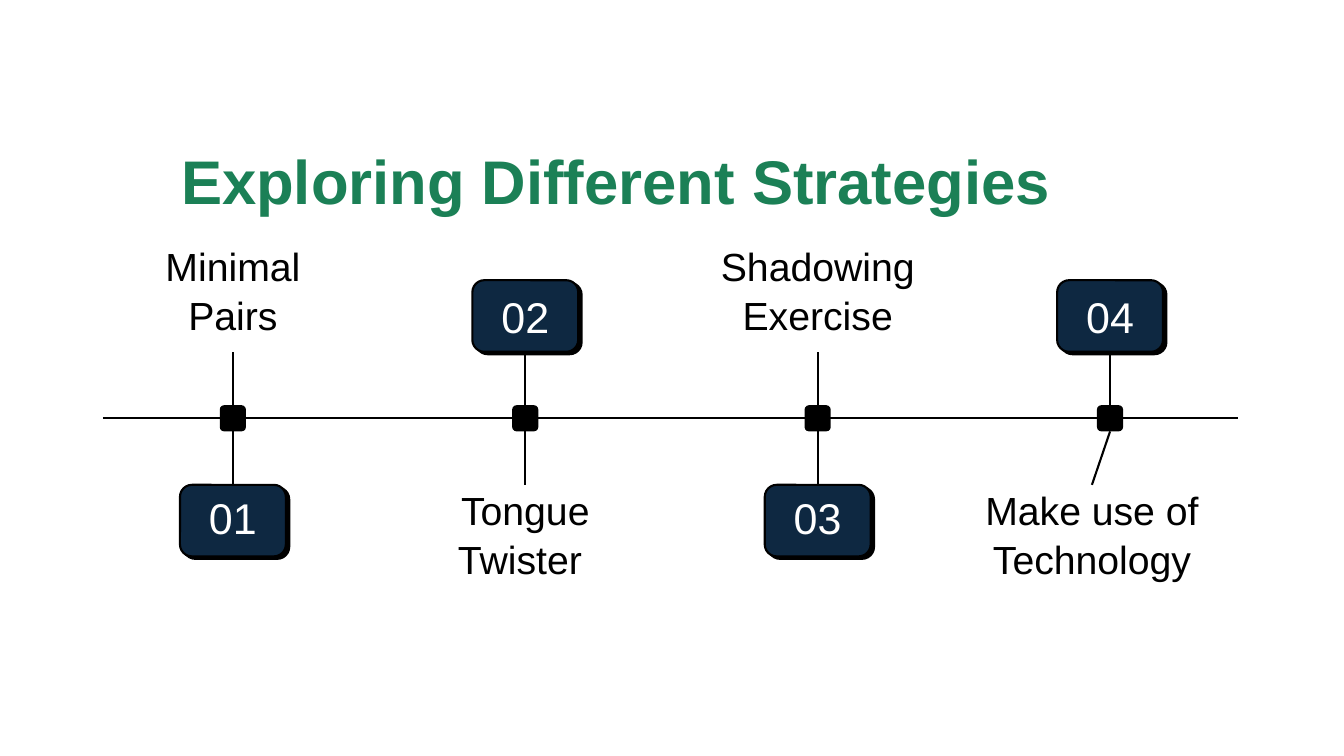
from lxml.etree import SubElement
from pptx import Presentation
from pptx.dml.color import RGBColor
from pptx.enum.shapes import MSO_CONNECTOR, MSO_SHAPE
from pptx.enum.text import MSO_ANCHOR, MSO_AUTO_SIZE, PP_ALIGN
from pptx.oxml.ns import qn
from pptx.util import Inches, Pt

SLIDE_WIDTH, SLIDE_HEIGHT = 13.33, 7.5
FONT = "Arial"
GREEN, NAVY, BLACK, WHITE = "1B8056", "0E2841", "000000", "FFFFFF"
INSET = 0.13

# Timeline grid, in inches
FIRST_COLUMN, COLUMN = 1.29, 2.9
CARD_WIDTH, CARD_HEIGHT = 1.05, 0.71
NUMBER_WIDTH, NUMBER_HEIGHT = 1.07, 0.65
MARKER = 0.26
STEM = 0.66  # from the axis to a card or a label

# Number, label, label width, label height, label shift, label above the axis
STEPS = [
    ("01", "Minimal Pairs", 2.54, 0.67, 0, True),
    ("02", "Tongue Twister ", 2.54, 1.1, 0, False),
    ("03", "Shadowing Exercise", 3.22, 0.67, 0, True),
    ("04", "Make use of Technology", 2.91, 1.1, -0.18, False),
]


def color(hex_string):
    return RGBColor.from_string(hex_string)


def inches(*lengths):
    return [Inches(length) for length in lengths]


def write_text(shape, text, size, fill, bold=False, align=PP_ALIGN.CENTER,
               anchor=MSO_ANCHOR.MIDDLE, line_spacing=1.0):
    frame = shape.text_frame
    frame.word_wrap = True
    frame.auto_size = MSO_AUTO_SIZE.NONE
    frame.vertical_anchor = anchor
    frame.margin_left = frame.margin_right = Inches(INSET)
    frame.margin_top = frame.margin_bottom = Inches(INSET)
    frame.text = text
    paragraph = frame.paragraphs[0]
    paragraph.alignment = align
    paragraph.line_spacing = line_spacing
    font = paragraph.runs[0].font
    font.name, font.size, font.bold = FONT, Pt(size), bold
    font.color.rgb = color(fill)


def add_text(slide, box, text, size, fill, **text_format):
    write_text(slide.shapes.add_textbox(*inches(*box)), text, size, fill,
               **text_format)


def add_line(slide, *ends):
    line = slide.shapes.add_connector(MSO_CONNECTOR.STRAIGHT, *inches(*ends))
    line.line.color.rgb = color(BLACK)
    line.line.width = Pt(1.5)
    SubElement(line._element.spPr, qn("a:effectLst"))


def add_rounded(slide, box, fill):
    shape = slide.shapes.add_shape(MSO_SHAPE.ROUNDED_RECTANGLE, *inches(*box))
    shape.shadow.inherit = False
    shape.fill.solid()
    shape.fill.fore_color.rgb = color(fill)
    shape.line.fill.background()
    return shape


def add_hard_shadow(shape):
    effects = shape._element.spPr.find(qn("a:effectLst"))
    shadow = SubElement(effects, qn("a:outerShdw"), blurRad="0",
                        dist=str(Pt(3)), dir=str(36 * 60000),
                        algn="tl", rotWithShape="0")
    SubElement(shadow, qn("a:srgbClr"), val=BLACK)


def add_card(slide, center, top, number, number_top):
    box = (center - CARD_WIDTH / 2, top, CARD_WIDTH, CARD_HEIGHT)
    card = add_rounded(slide, box, NAVY)
    card.line.color.rgb = color(BLACK)
    card.line.width = Pt(1.5)
    add_hard_shadow(card)
    add_text(slide, (center - NUMBER_WIDTH / 2, number_top, NUMBER_WIDTH,
                     NUMBER_HEIGHT), number, 30.7, WHITE)


def add_title(slide, left, top, width, height):
    title = slide.shapes.title
    title.left, title.top, title.width, title.height = inches(
        left, top, width, height)
    write_text(title, "Exploring Different Strategies", 44, GREEN, bold=True,
               align=PP_ALIGN.LEFT, anchor=MSO_ANCHOR.TOP, line_spacing=1.08)


def add_step(slide, center, axis, step):
    number, label, width, height, shift, label_above = step
    upper, lower = axis - STEM, axis + STEM
    label_center = center + shift

    # Card on one side of the axis, label on the other
    if label_above:
        label_top = upper - height
        add_card(slide, center, lower, number, lower)
    else:
        label_top = lower
        add_card(slide, center, upper - CARD_HEIGHT, number,
                 upper - NUMBER_HEIGHT - 0.03)
    add_text(slide, (label_center - width / 2, label_top, width, height),
             label, 28, BLACK, anchor=MSO_ANCHOR.BOTTOM, line_spacing=1.04)

    # Marker and its two stems
    half = MARKER / 2
    add_rounded(slide, (center - half, axis - half, MARKER, MARKER), BLACK)
    add_line(slide, center, axis - half, center, upper)
    add_line(slide, center, axis + half, label_center, lower)


def add_timeline(slide, left, top, width, height):
    axis = top + height / 2
    add_line(slide, left, axis, left + width, axis)
    for index, step in enumerate(STEPS):
        add_step(slide, left + FIRST_COLUMN + index * COLUMN, axis, step)


def main():
    presentation = Presentation()
    presentation.slide_width, presentation.slide_height = inches(
        SLIDE_WIDTH, SLIDE_HEIGHT)
    slide = presentation.slides.add_slide(presentation.slide_layouts[5])
    add_title(slide, SLIDE_WIDTH / 8, 1.23, SLIDE_WIDTH * 0.75, 2.61)
    add_timeline(slide, 1.02, 2.78, 11.26, 2.74)
    presentation.save("out.pptx")


if __name__ == "__main__":
    main()
